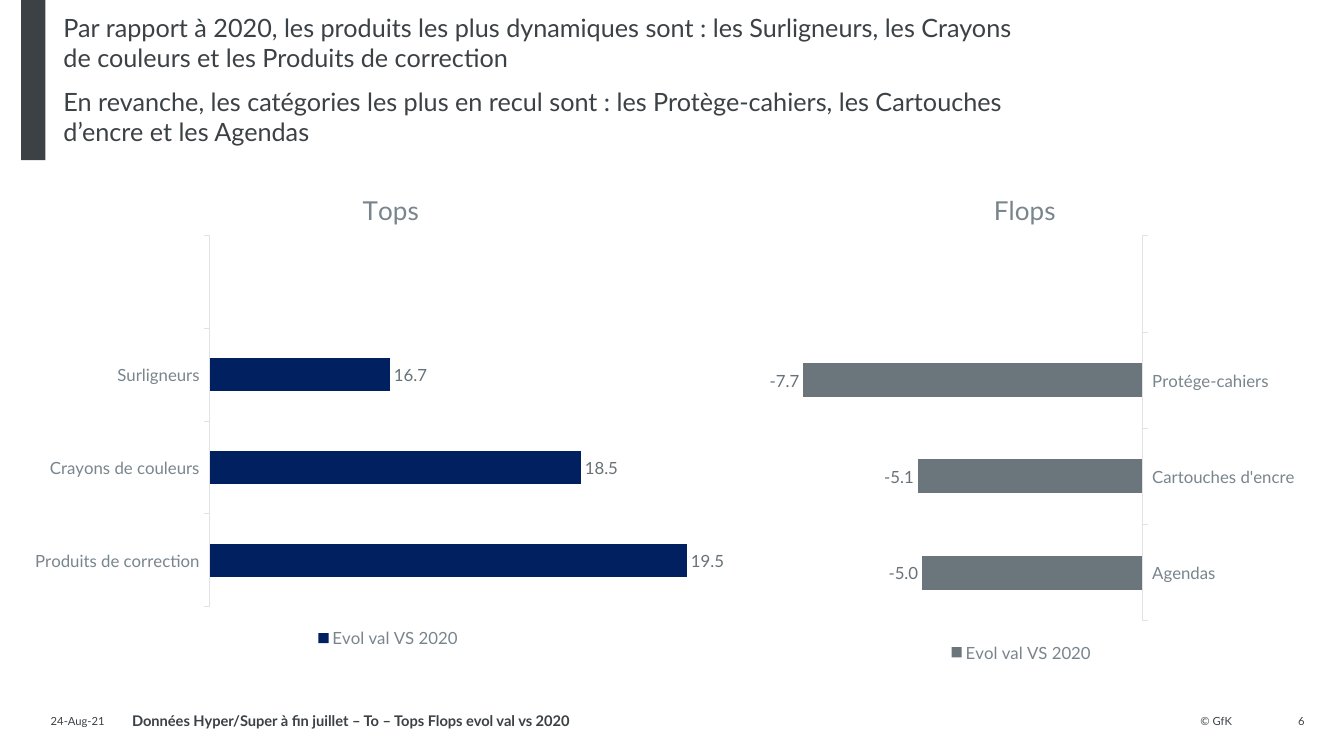
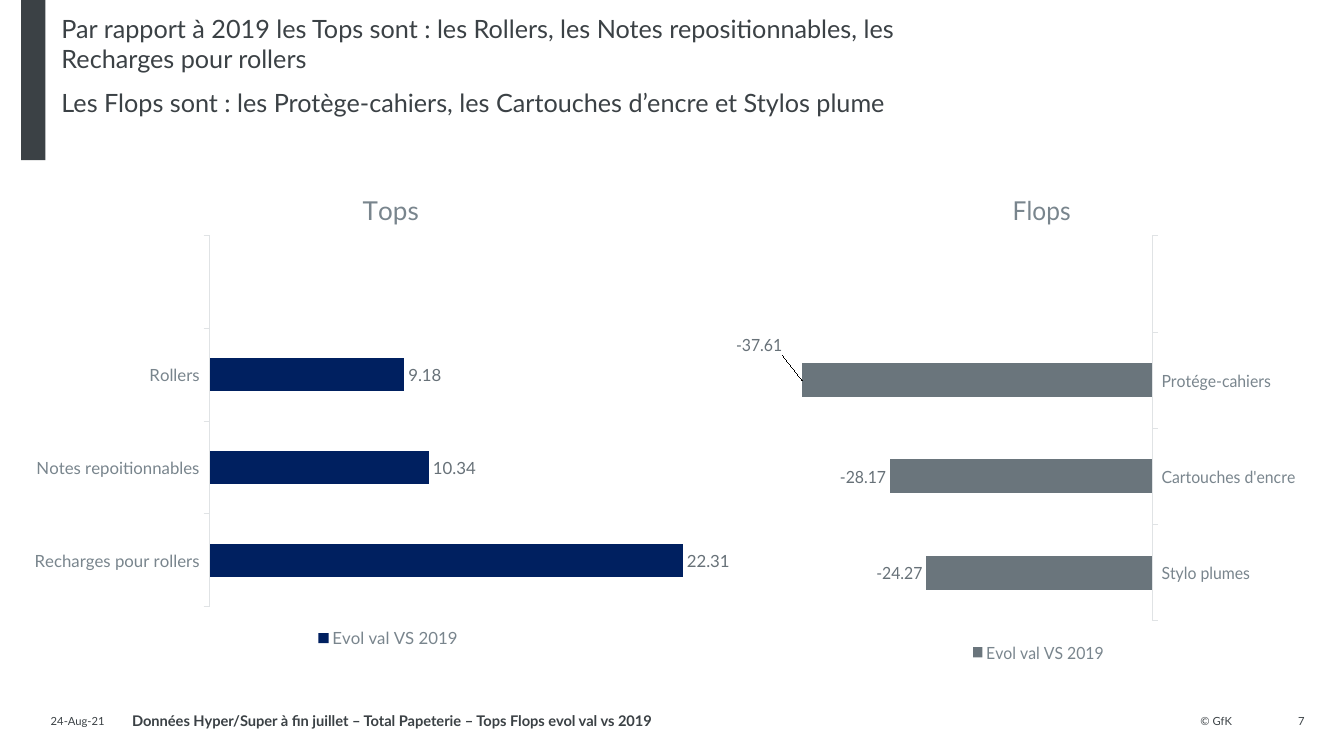
from dataclasses import dataclass

from lxml.etree import SubElement
from pptx import Presentation
from pptx.chart.data import CategoryChartData as Data
from pptx.dml.color import RGBColor as Rgb
from pptx.enum.chart import XL_AXIS_CROSSES as Cross
from pptx.enum.chart import XL_CHART_TYPE as Kind
from pptx.enum.chart import XL_LABEL_POSITION as Spot
from pptx.enum.chart import XL_LEGEND_POSITION as Side
from pptx.enum.chart import XL_TICK_LABEL_POSITION as Tags
from pptx.enum.chart import XL_TICK_MARK as Tick
from pptx.enum.shapes import MSO_SHAPE as Shape
from pptx.enum.text import MSO_ANCHOR as Anchor
from pptx.enum.text import PP_ALIGN as Align
from pptx.oxml.ns import qn
from pptx.util import Inches, Pt


@dataclass(frozen=True)
class Theme:
    font: str = "Lato"
    ink: str = "3B4145"
    soft: str = "79858D"
    label: str = "677178"
    line: str = "E0E3E5"
    navy: str = "002060"
    grey: str = "6A757C"
    head: float = 18
    title: float = 18.6
    body: float = 12
    note: float = 10.5
    small: float = 8


T = Theme()


@dataclass(frozen=True)
class Box:
    x: float
    y: float
    w: float
    h: float

    def lengths(self) -> list:
        return [Inches(v) for v in (self.x, self.y, self.w, self.h)]


@dataclass(frozen=True)
class Panel:
    """Frame, plot area and look shared by one side of every slide."""
    title: str
    frame: Box
    plot: Box
    name_x: float
    color: str
    right: bool = False


@dataclass(frozen=True)
class Bars:
    names: list[str]
    values: list[float]
    low: float
    high: float
    moved: int | None = None


@dataclass(frozen=True)
class Page:
    number: int
    year: int
    head: list[str]
    box: Box
    note: str
    form: str
    tops: Bars
    flops: Bars


NAME_Y = 1.85
TOPS = Panel("Tops", Box(0.21, 1.62, 7.28, 4.85), Box(2.08, 2.34, 5.26, 3.68),
             3.55, T.navy)
FLOPS = Panel("Flops", Box(7.3, 1.62, 5.66, 4.99), Box(7.4, 2.34, 3.93, 3.82),
              9.81, T.grey, True)

PAGES = [
    Page(6, 2020,
         ["Par rapport à 2020, les produits les plus dynamiques sont : les "
          "Surligneurs, les Crayons de couleurs et les Produits de correction",
          "En revanche, les catégories les plus en recul sont : les "
          "Protège-cahiers, les Cartouches d’encre et les Agendas"],
         Box(0.63, 0.12, 9.43, 1.5), "To", "#,##0.0",
         Bars(["Produits de correction", "Crayons de couleurs", "Surligneurs"],
              [19.5, 18.5, 16.7], 15, 20),
         Bars(["Agendas", "Cartouches d'encre", "Protége-cahiers"],
              [-5, -5.1, -7.7], -9, 0)),
    Page(7, 2019,
         ["Par rapport à 2019 les Tops sont : les Rollers, les Notes "
          "repositionnables, les Recharges pour rollers",
          "Les Flops sont : les Protège-cahiers, les Cartouches d’encre et "
          "Stylos plume"],
         Box(0.61, 0.13, 9.29, 1.5), "Total Papeterie", "#,##0.00",
         Bars(["Recharges pour rollers", "Notes repoitionnables", "Rollers"],
              [22.31, 10.34, 9.18], 0, 25),
         Bars(["Stylo plumes", "Cartouches d'encre", "Protége-cahiers"],
              [-24.27, -28.17, -37.61], -40, 0, moved=2)),
]


def style(font, size: float, color: str, bold: bool = False) -> None:
    font.name, font.size, font.bold = T.font, Pt(size), bold
    font.color.rgb = Rgb.from_string(color)


def write(slide, box: Box, lines: list[str], *, size: float = T.small,
          bold: bool = False, align=Align.LEFT, anchor=Anchor.BOTTOM,
          gap: float = 0) -> None:
    frame = slide.shapes.add_textbox(*box.lengths()).text_frame
    frame.word_wrap = True
    frame.vertical_anchor = anchor
    frame.margin_left = frame.margin_right = 0
    frame.margin_top = frame.margin_bottom = 0
    for i, line in enumerate(lines):
        para = frame.add_paragraph() if i else frame.paragraphs[0]
        para.text, para.alignment = line, align
        if i:
            para.space_before = Pt(gap)
        style(para.font, size, T.ink, bold)


def place(host, index: int, **values) -> None:
    """Give a chart part a manual layout."""
    for old in host.findall(qn("c:layout")):
        host.remove(old)
    layout = SubElement(host, qn("c:layout"))
    host.insert(index, layout)
    manual = SubElement(layout, qn("c:manualLayout"))
    for key, val in values.items():
        SubElement(manual, qn(f"c:{key}")).set("val", str(val))


def draw_bars(slide, panel: Panel, bars: Bars, year: int, form: str) -> None:
    # The empty fourth category leaves room above the bars
    data = Data(number_format=form)
    data.categories = [*bars.names, ""]
    data.add_series(f"Evol val VS {year}", [*bars.values, None])
    frame, plot = panel.frame, panel.plot
    chart = slide.shapes.add_chart(
        Kind.BAR_CLUSTERED, *frame.lengths(), data).chart
    style(chart.font, T.body, T.soft)

    # Title
    chart.has_title = True
    title = chart.chart_title
    para = title.text_frame.paragraphs[0]
    para.text = panel.title
    style(para.runs[0].font, T.title, T.soft)
    place(title._element, 1, xMode="edge", yMode="edge",
          x=(panel.name_x - frame.x) / frame.w, y=(NAME_Y - frame.y) / frame.h)

    # Plot area and legend
    place(chart._chartSpace.chart.plotArea, 0, layoutTarget="inner",
          xMode="edge", yMode="edge",
          x=(plot.x - frame.x) / frame.w, y=(plot.y - frame.y) / frame.h,
          w=plot.w / frame.w, h=plot.h / frame.h)
    chart.has_legend = True
    chart.legend.position = Side.BOTTOM
    chart.legend.include_in_layout = False
    style(chart.legend.font, T.body, T.soft)

    # Axes
    axis, scale = chart.category_axis, chart.value_axis
    axis.major_tick_mark = Tick.OUTSIDE
    axis.format.line.color.rgb = Rgb.from_string(T.line)
    axis.format.line.width = Pt(0.75)
    style(axis.tick_labels.font, T.body, T.soft)
    scale.has_major_gridlines = False
    scale.minimum_scale, scale.maximum_scale = bars.low, bars.high
    scale.visible = False
    if panel.right:
        scale.crosses = Cross.MAXIMUM
        axis.tick_label_position = Tags.HIGH
    else:
        scale.crosses = Cross.MINIMUM

    # Bars and labels
    group = chart.plots[0]
    group.gap_width, group.vary_by_categories = 182, False
    series = group.series[0]
    series.invert_if_negative = False
    series.format.fill.solid()
    series.format.fill.fore_color.rgb = Rgb.from_string(panel.color)
    labels = series.data_labels
    labels.show_value, labels.position = True, Spot.OUTSIDE_END
    labels.number_format, labels.number_format_is_linked = form, False
    style(labels.font, T.body, T.label)
    if bars.moved is not None:
        label = series.points[bars.moved].data_label
        style(label.font, T.body, T.label)
        label.position = Spot.OUTSIDE_END
        place(series._element.find(".//" + qn("c:dLbl")), 1, x=-0.03, y=-0.07)


def draw_base(slide, page: Page) -> None:
    band = slide.shapes.add_shape(
        Shape.RECTANGLE, *Box(0.21, 0, 0.24, 1.59).lengths())
    band.shadow.inherit = False
    band.fill.solid()
    band.fill.fore_color.rgb = Rgb.from_string(T.ink)
    band.line.fill.background()
    # Footer
    for x, w, text in ((0.21, 0.83, "24-Aug-21"), (11.67, 0.55, "© GfK"),
                       (12.23, 0.71, str(page.number))):
        write(slide, Box(x, 7.07, w, 0.15), [text], align=Align.RIGHT)
    write(slide, Box(1.31, 7.07, 8.93, 0.15),
          [f"Données Hyper/Super à fin juillet – {page.note} – "
           f"Tops Flops evol val vs {page.year}"],
          size=T.note, bold=True, anchor=Anchor.MIDDLE)


def main() -> None:
    deck = Presentation()
    deck.slide_width, deck.slide_height = Inches(13.33), Inches(7.5)
    for page in PAGES:
        slide = deck.slides.add_slide(deck.slide_layouts[6])
        draw_base(slide, page)
        write(slide, page.box, page.head, size=T.head, anchor=Anchor.TOP,
              gap=10)
        for panel, bars in ((TOPS, page.tops), (FLOPS, page.flops)):
            draw_bars(slide, panel, bars, page.year, page.form)
    deck.save("out.pptx")


if __name__ == "__main__":
    main()
